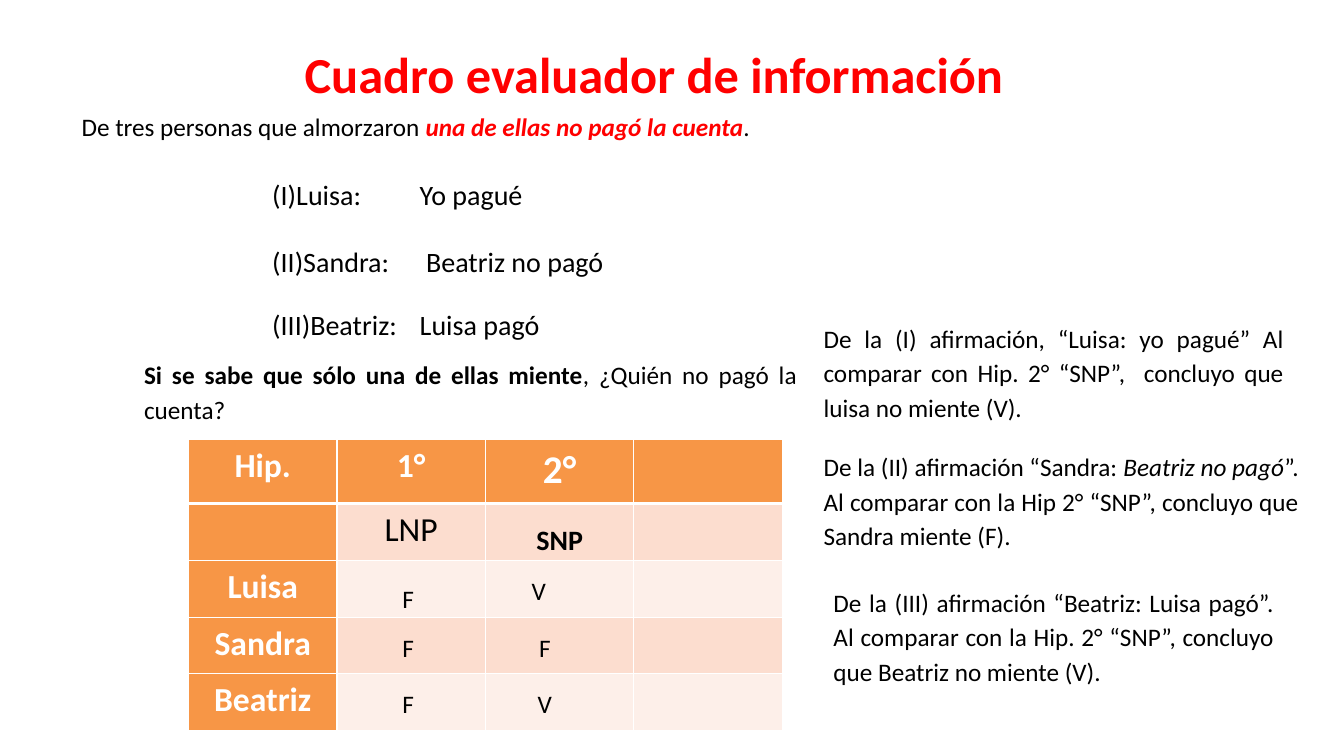
from lxml import etree
from pptx import Presentation
from pptx.dml.color import RGBColor
from pptx.enum.text import MSO_ANCHOR, MSO_AUTO_SIZE, PP_ALIGN
from pptx.oxml.ns import qn
from pptx.util import Inches, Pt

COLORS = {"red": "FF0000", "black": "000000", "white": "FFFFFF",
          "orange": "F79646", "band": "FCDDCF", "pale": "FDEFE9"}
FONT = "Calibri"
WIDTH, HEIGHT = Inches(13.33), Inches(7.5)
COL, ROW = WIDTH / 100, HEIGHT / 100


def grid_box(x, y, w, h):
    return int(x * COL), int(y * ROW), int(w * COL), int(h * ROW)


def inner_box(box, x, y, w, h):
    left, top, width, height = box
    return (int(left + x * width), int(top + y * height),
            int(w * width), int(h * height))


def write(tf, runs, size, align, after=0, spacing=1.15):
    p = tf.paragraphs[0]
    p.alignment = align
    p.line_spacing = spacing
    p.space_before = Pt(0)
    p.space_after = Pt(after)
    for text, color, bold, italic in runs:
        r = p.add_run()
        r.text = text
        r.font.name = FONT
        r.font.size = Pt(size)
        r.font.bold = bold
        r.font.italic = italic
        r.font.color.rgb = RGBColor.from_string(COLORS[color])
    return p


def plain(text, color="black", bold=False, italic=False):
    return text, color, bold, italic


def add_text(s, box, runs, size=18, align=PP_ALIGN.JUSTIFY, after=10,
             spacing=1.15, wrap=True):
    tf = s.shapes.add_textbox(*box).text_frame
    tf.word_wrap = wrap
    tf.auto_size = MSO_AUTO_SIZE.SHAPE_TO_FIT_TEXT
    write(tf, runs, size, align, after, spacing)


def add_title(s, box):
    title = s.shapes.title
    title.left, title.top, title.width, title.height = box
    tf = title.text_frame
    tf.word_wrap = False
    tf.auto_size = MSO_AUTO_SIZE.SHAPE_TO_FIT_TEXT
    tf.vertical_anchor = MSO_ANCHOR.TOP
    p = write(tf, [plain("Cuadro evaluador de información ", "red", True)],
              36, PP_ALIGN.CENTER, 10)
    p._p.get_or_add_pPr().set("marL", str(Inches(0.5)))


def make_table(s, box, col_shares, row_shares):
    table = s.shapes.add_table(len(row_shares), len(col_shares), *box).table
    table.first_row = table.horz_banding = False
    for column, share in zip(table.columns, col_shares):
        column.width = int(box[2] * share)
    for row, share in zip(table.rows, row_shares):
        row.height = int(box[3] * share)
    for cell in table.iter_cells():
        cell.margin_left = cell.margin_right = Inches(0.07)
        cell.margin_top = cell.margin_bottom = 0
    return table


def set_borders(cell, widths):
    tcPr = cell._tc.get_or_add_tcPr()
    for i, (side, width) in enumerate(zip("LRTB", widths)):
        ln = etree.Element(qn(f"a:ln{side}"), w=str(Pt(width)))
        fill = etree.SubElement(ln, qn("a:solidFill"))
        etree.SubElement(fill, qn("a:srgbClr"), val=COLORS["white"])
        tcPr.insert(i, ln)


def add_statements(s, box):
    rows = [("(I)Luisa:", "Yo pagué"),
            ("(II)Sandra:", " Beatriz no pagó"),
            ("(III)Beatriz:", "Luisa pagó")]
    table = make_table(s, box, (0.4, 0.6), (0.34, 0.32, 0.34))
    for i, texts in enumerate(rows):
        for j, text in enumerate(texts):
            cell = table.cell(i, j)
            cell.fill.background()
            write(cell.text_frame, [plain(text)], 20, PP_ALIGN.JUSTIFY)


def add_hypotheses(s, box):
    rows = [("Hip.", "1°", "2°", ""), ("", "LNP", "", ""),
            ("Luisa", "", "", ""), ("Sandra", "", "", ""),
            ("Beatriz", "", "", "")]
    table = make_table(s, box, [0.25] * 4, [0.22] + [0.195] * 4)
    for i, texts in enumerate(rows):
        for j, text in enumerate(texts):
            cell = table.cell(i, j)
            head = i == 0 or j == 0
            fill = "orange" if head else "band" if i % 2 else "pale"
            cell.fill.solid()
            cell.fill.fore_color.rgb = RGBColor.from_string(COLORS[fill])
            set_borders(cell, (1, 1, 3 if i == 1 else 1, 3 if i == 0 else 1))
            if text:
                run = plain(text, "white" if head else "black", head)
                size = 28 if text == "2°" else 24
                write(cell.text_frame, [run], size, PP_ALIGN.CENTER)


def add_verdicts(s, box):
    add_text(s, inner_box(box, 0.54, 0.25, 0.17, 0.16),
             [plain("SNP", bold=True)], 20, PP_ALIGN.CENTER, 0)
    marks = [("F", 0.34, 0.46, 1.15), ("F", 0.34, 0.63, 1.15),
             ("F", 0.34, 0.82, 1.15), ("V", 0.56, 0.45, 1.0),
             ("F", 0.57, 0.63, 1.15), ("V", 0.57, 0.82, 1.15)]
    for mark, x, y, spacing in marks:
        add_text(s, inner_box(box, x, y, 0.06, 0.15), [plain(mark)],
                 align=PP_ALIGN.CENTER, after=0, spacing=spacing, wrap=False)


def add_problem(s, intro_box, question_box):
    add_text(s, intro_box,
             [plain("De tres personas que almorzaron "),
              plain("una de ellas no pagó la cuenta", "red", True, True),
              plain(".")], align=PP_ALIGN.LEFT)
    add_text(s, question_box,
             [plain("Si se sabe que sólo una de ellas miente", bold=True),
              plain(", ¿Quién no pagó la cuenta?")])


def add_conclusions(s, box):
    notes = [
        (0, 0, 0.97, [plain("De la (I) afirmación, “Luisa: yo pagué” Al comparar con "
                            "Hip. 2° “SNP”,  concluyo que luisa no miente (V).")]),
        (0, 0.34, 1, [plain("De la (II) afirmación “Sandra: "),
                      plain("Beatriz no pagó", italic=True),
                      plain("”. Al comparar con la Hip 2° “SNP”, "
                            "concluyo que Sandra miente (F).")]),
        (0.02, 0.7, 0.93, [plain("De la (III) afirmación “Beatriz: Luisa pagó”. Al comparar "
                                 "con la Hip. 2° “SNP”, concluyo que Beatriz no miente (V).")]),
    ]
    for x, y, w, runs in notes:
        add_text(s, inner_box(box, x, y, w, 0.3), runs)


def main():
    prs = Presentation()
    prs.slide_width, prs.slide_height = WIDTH, HEIGHT
    s = prs.slides.add_slide(prs.slide_layouts[5])
    hypotheses = grid_box(14.03, 58.13, 44.18, 38.53)
    add_title(s, grid_box(17.85, 3.87, 58.74, 10.13))
    add_hypotheses(s, hypotheses)
    add_statements(s, grid_box(19.73, 22.93, 27.45, 26.13))
    add_problem(s, grid_box(5.33, 13.47, 65.34, 7.2),
                grid_box(9.98, 46.27, 50.04, 11.87))
    add_verdicts(s, hypotheses)
    add_conclusions(s, grid_box(60.54, 41.47, 36.83, 49.87))
    prs.save("out.pptx")


if __name__ == "__main__":
    main()
